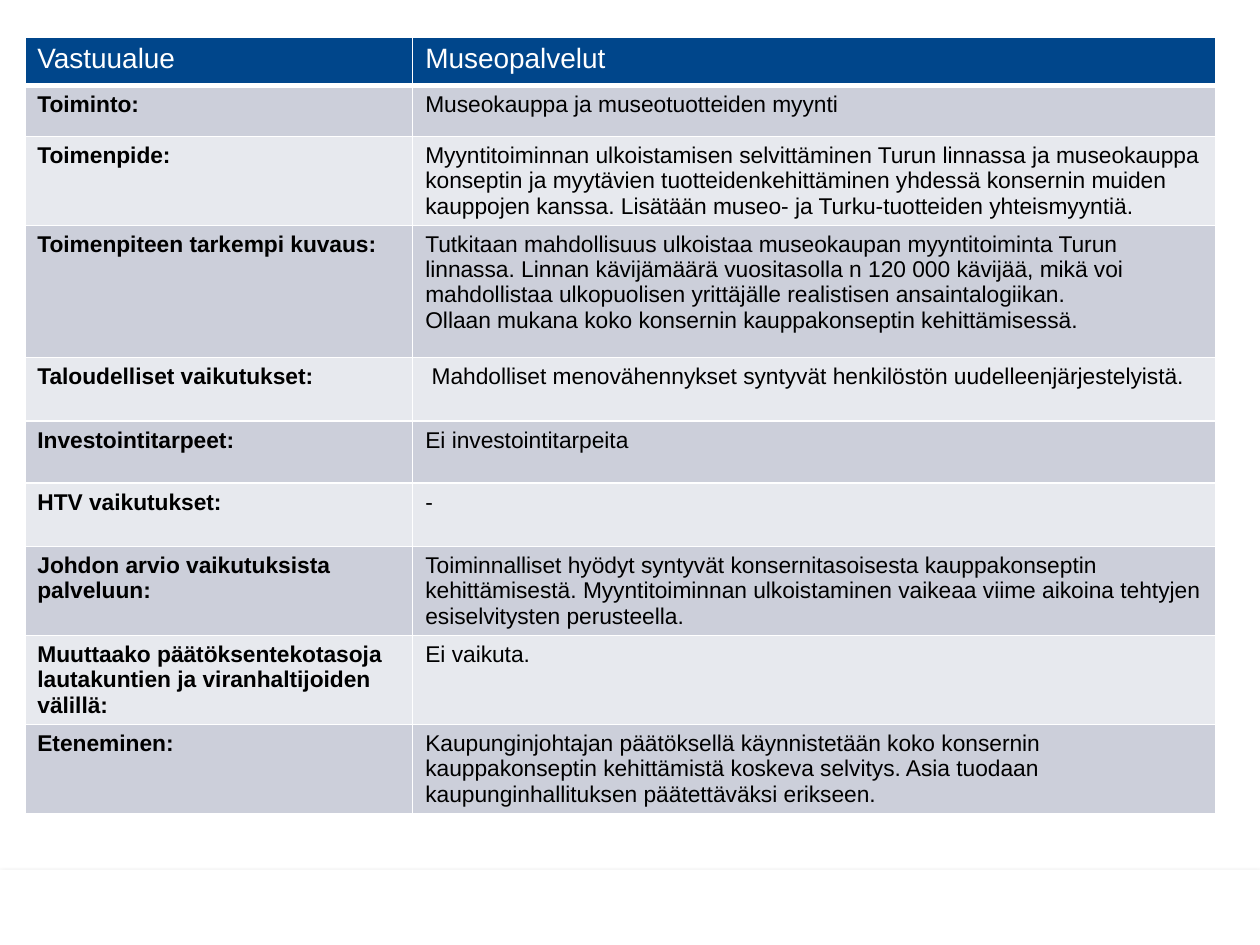
from lxml import etree
from pptx import Presentation
from pptx.dml.color import RGBColor
from pptx.enum.shapes import MSO_SHAPE
from pptx.oxml.ns import qn
from pptx.util import Cm, Pt

RECT = MSO_SHAPE.RECTANGLE
BLANK = 6
WHITE = RGBColor(0xFF, 0xFF, 0xFF)
BLACK = RGBColor(0x00, 0x00, 0x00)
BLUE = RGBColor(0x00, 0x46, 0x8B)
BANDS = (RGBColor(0xCC, 0xCF, 0xDA), RGBColor(0xE7, 0xE9, 0xEE))

COLS = (7.82, 16.18)
ROWS = (
    (0.98, "Vastuualue", "Museopalvelut"),
    (1.02, "Toiminto:", "Museokauppa ja museotuotteiden myynti"),
    (1.79, "Toimenpide:",
     "Myyntitoiminnan ulkoistamisen selvittäminen Turun linnassa ja museokauppa "
     "konseptin ja myytävien tuotteidenkehittäminen yhdessä konsernin muiden "
     "kauppojen kanssa. Lisätään museo- ja Turku-tuotteiden yhteismyyntiä."),
    (2.67, "Toimenpiteen tarkempi kuvaus:",
     "Tutkitaan mahdollisuus ulkoistaa museokaupan myyntitoiminta Turun "
     "linnassa. Linnan kävijämäärä vuositasolla n 120 000 kävijää, mikä voi "
     "mahdollistaa ulkopuolisen yrittäjälle realistisen ansaintalogiikan.\n"
     "Ollaan mukana koko konsernin kauppakonseptin kehittämisessä."),
    (1.28, "Taloudelliset vaikutukset:",
     " Mahdolliset menovähennykset syntyvät henkilöstön uudelleenjärjestelyistä."),
    (1.25, "Investointitarpeet:", "Ei investointitarpeita"),
    (1.28, "HTV vaikutukset:", "-"),
    (1.78, "Johdon arvio vaikutuksista palveluun:",
     "Toiminnalliset hyödyt syntyvät konsernitasoisesta kauppakonseptin "
     "kehittämisestä. Myyntitoiminnan ulkoistaminen vaikeaa viime aikoina tehtyjen "
     "esiselvitysten perusteella."),
    (1.79, "Muuttaako päätöksentekotasoja lautakuntien ja viranhaltijoiden välillä:",
     "Ei vaikuta."),
    (1.78, "Eteneminen:",
     "Kaupunginjohtajan päätöksellä käynnistetään koko konsernin "
     "kauppakonseptin kehittämistä koskeva selvitys. Asia tuodaan "
     "kaupunginhallituksen päätettäväksi erikseen."),
)


def node(parent, tag, **attrs):
    """Add a child element with the given attributes."""
    return etree.SubElement(parent, qn(tag), {k: str(v) for k, v in attrs.items()})


class Deck:
    font = "Arial"
    head_size = Pt(16)
    body_size = Pt(13)

    def __init__(self, slide):
        self.slide = slide

    def footer(self, left, top, width, height):
        """Draw the white strip with a soft shadow below its top edge."""
        strip = self.slide.shapes.add_shape(
            RECT, Cm(left), Cm(top), Cm(width), Cm(height))
        strip.fill.solid()
        strip.fill.fore_color.rgb = WHITE
        strip.line.fill.background()
        strip.shadow.inherit = False
        effects = strip.fill._xPr.find(qn("a:effectLst"))
        shade = node(effects, "a:outerShdw", blurRad=Pt(3.1), dist=Pt(1.8),
                     dir=5400000, rotWithShape=0)
        color = node(shade, "a:srgbClr", val=BLACK)
        node(color, "a:alpha", val=35000)

    def border(self, cell, head):
        props = cell._tc.get_or_add_tcPr()
        for side in "LRTB":
            width = Pt(3) if head and side == "B" else Pt(1)
            line = node(props, f"a:ln{side}", w=width)
            node(node(line, "a:solidFill"), "a:srgbClr", val=WHITE)

    def cell(self, cell, text, fill, head, bold):
        self.border(cell, head)
        cell.fill.solid()
        cell.fill.fore_color.rgb = fill
        cell.text_frame.text = text
        for para in cell.text_frame.paragraphs:
            for run in para.runs:
                font = run.font
                font.name = self.font
                font.size = self.head_size if head else self.body_size
                font.bold = bold
                font.color.rgb = WHITE if head else BLACK

    def table(self, left, top, cols, rows):
        high = sum(row[0] for row in rows)
        frame = self.slide.shapes.add_table(
            len(rows), len(cols), Cm(left), Cm(top), Cm(sum(cols)), Cm(high))
        grid = frame.table
        grid.horz_banding = False
        for col, width in zip(grid.columns, cols):
            col.width = Cm(width)
        for i, (height, *texts) in enumerate(rows):
            grid.rows[i].height = Cm(height)
            head = i == 0
            fill = BLUE if head else BANDS[(i - 1) % 2]
            for j, text in enumerate(texts):
                self.cell(grid.cell(i, j), text, fill, head, not head and j == 0)


def main():
    prs = Presentation()
    prs.slide_width, prs.slide_height = Cm(25.4), Cm(19.05)
    deck = Deck(prs.slides.add_slide(prs.slide_layouts[BLANK]))
    deck.footer(0, 17.53, 25.4, 1.52)
    deck.table(0.5, 0.75, COLS, ROWS)
    prs.save("out.pptx")


if __name__ == "__main__":
    main()
